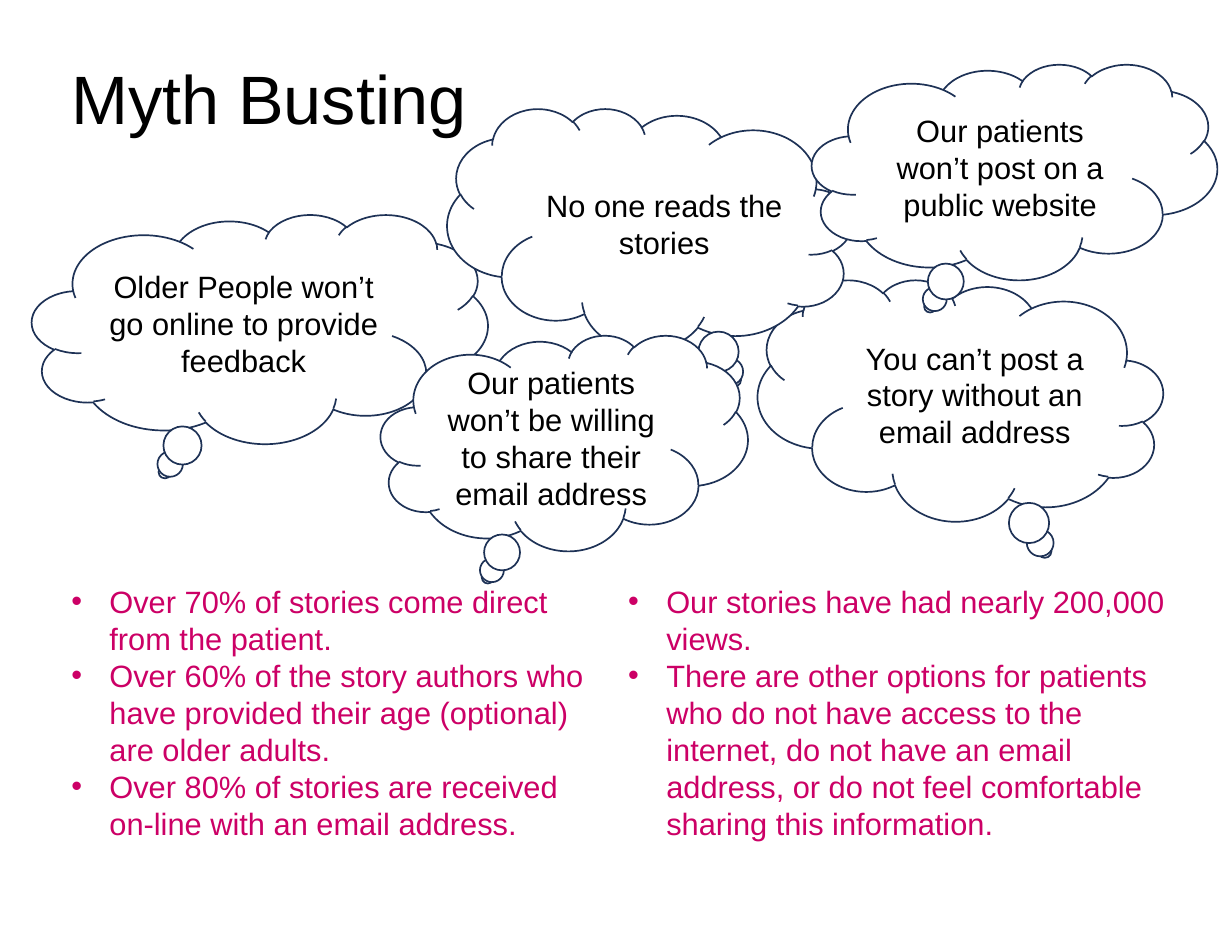
from pptx import Presentation
from pptx.dml.color import RGBColor
from pptx.enum import shapes, text
from pptx.oxml.ns import qn
from pptx.util import Inches, Pt
from lxml import etree

# Content
TITLE = "Myth Busting"

# Myths, back to front: text, left, top, width, height, tail to the right
MYTHS = [
    ("Older People won’t go online to provide feedback", 0.26, 1.74, 3.7, 1.86, False),
    ("You can’t post a story without an email address", 6.15, 2.27, 3.29, 1.96, True),
    ("No one reads the stories", 3.63, 0.88, 3.29, 1.96, True),
    ("Our patients won’t post on a public website", 6.59, 0.52, 3.29, 1.75, False),
    ("Our patients won’t be willing to share their email address", 3.09, 2.72, 2.98, 1.75, False),
]

# Facts: left, width, points
FACTS = [
    (0.48, 4.52, [
        "Over 70% of stories come direct from the patient.",
        "Over 60% of the story authors who have provided their age (optional) are older adults.",
        "Over 80% of stories are received on-line with an email address.",
    ]),
    (5, 4.72, [
        "Our stories have had nearly 200,000 views.",
        "There are other options for patients who do not have access to the internet, "
        "do not have an email address, or do not feel comfortable sharing this information.",
    ]),
]

BLACK, WHITE, NAVY, PINK = "000000", "FFFFFF", "1E3256", "CC0066"
INDENT = Inches(0.31)


def color(code):
    return RGBColor.from_string(code)


def style(par, size, code):
    for run in par.runs:
        run.font.name = "Arial"
        run.font.size = Pt(size)
        run.font.color.rgb = color(code)


def add_box(left, top, width, height, words):
    box = slide.shapes.add_textbox(*map(Inches, (left, top, width, height)))
    box.text_frame.word_wrap = True
    box.text_frame.text = words
    return box.text_frame


def add_cloud(words, left, top, width, height, flip):
    cloud = slide.shapes.add_shape(
        shapes.MSO_SHAPE.CLOUD_CALLOUT, *map(Inches, (left, top, width, height)))
    cloud.shadow.inherit = False
    cloud.fill.solid()
    cloud.fill.fore_color.rgb = color(WHITE)
    cloud.line.color.rgb = color(NAVY)
    cloud.line.width = Pt(1)
    if flip:
        cloud._element.spPr.find(qn("a:xfrm")).set("flipH", "1")
    frame = cloud.text_frame
    frame.word_wrap = True
    frame.vertical_anchor = text.MSO_ANCHOR.MIDDLE
    frame.text = words
    frame.paragraphs[0].alignment = text.PP_ALIGN.CENTER
    style(frame.paragraphs[0], 18, BLACK)


def add_bullet(par):
    props = par._p.get_or_add_pPr()
    props.set("marL", str(INDENT))
    props.set("indent", str(-INDENT))
    etree.SubElement(props, qn("a:buFont")).set("typeface", "Arial")
    etree.SubElement(props, qn("a:buChar")).set("char", "•")


deck = Presentation()
deck.slide_width, deck.slide_height = Inches(10), Inches(7.68)
slide = deck.slides.add_slide(deck.slide_layouts[6])

# Title
style(add_box(0.48, 0.41, 6.46, 0.77, TITLE).paragraphs[0], 40, BLACK)

# Thought clouds
for myth in MYTHS:
    add_cloud(*myth)

# Fact columns
for left, width, points in FACTS:
    for par in add_box(left, 4.68, width, 2.22, "\n".join(points)).paragraphs:
        add_bullet(par)
        style(par, 18, PINK)

deck.save("out.pptx")
